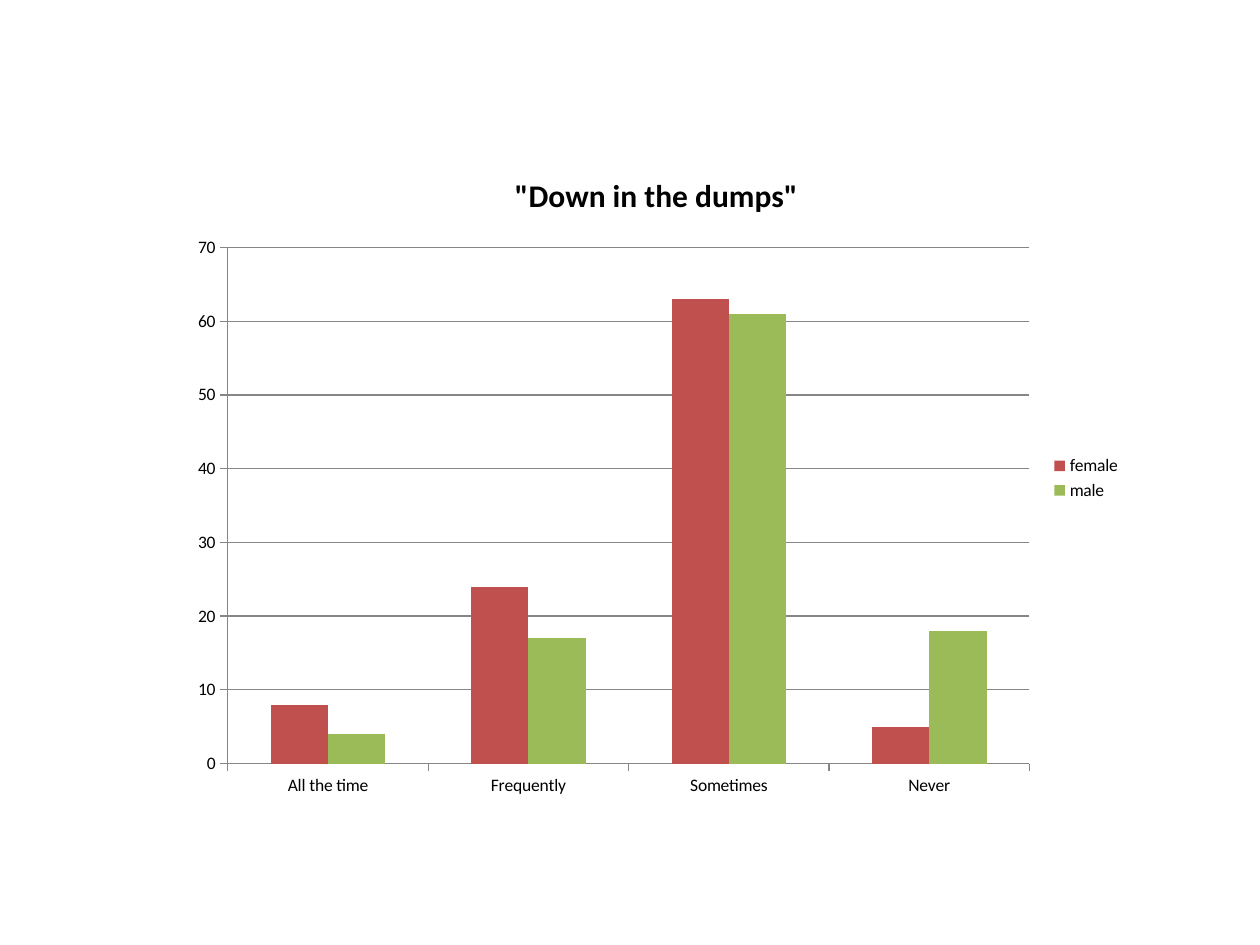
from pptx import Presentation
from pptx.chart.data import CategoryChartData
from pptx.dml.color import RGBColor
from pptx.enum.chart import XL_CHART_TYPE, XL_LEGEND_POSITION, XL_TICK_MARK
from pptx.util import Inches, Pt


def color(code):
    return RGBColor.from_string(code)


def apply(target, values):
    for name, value in values.items():
        setattr(target, name, value)


class Deck:
    face = "Calibri"
    ink = "000000"
    rule = "868686"

    def __init__(self, width, height):
        self.deck = Presentation()
        apply(self.deck, {"slide_width": Inches(width), "slide_height": Inches(height)})
        self.slide = None

    def page(self):
        self.slide = self.deck.slides.add_slide(self.deck.slide_layouts[6])

    def font(self, font, size, bold=False):
        apply(font, {"name": self.face, "size": Pt(size), "bold": bold})
        font.color.rgb = color(self.ink)

    def line(self, line):
        line.color.rgb = color(self.rule)
        line.width = Pt(0.75)

    def axis(self, axis, values):
        apply(axis, {"major_tick_mark": XL_TICK_MARK.OUTSIDE,
                     "minor_tick_mark": XL_TICK_MARK.NONE, **values})
        self.line(axis.format.line)
        if axis.has_major_gridlines:
            self.line(axis.major_gridlines.format.line)

    def columns(self, box, title, cats, series):
        data = CategoryChartData()
        data.categories = cats
        for name, values, _ in series:
            data.add_series(name, values)
        frame = self.slide.shapes.add_chart(
            XL_CHART_TYPE.COLUMN_CLUSTERED, *map(Inches, box), data)
        chart = frame.chart
        self.font(chart.font, 10)

        chart.has_title = True
        text = chart.chart_title.text_frame
        text.text = title
        self.font(text.paragraphs[0].runs[0].font, 18, True)

        chart.has_legend = True
        apply(chart.legend, {"position": XL_LEGEND_POSITION.RIGHT,
                             "include_in_layout": False})

        self.axis(chart.category_axis, {"has_major_gridlines": False})
        self.axis(chart.value_axis, {"has_major_gridlines": True, "minimum_scale": 0,
                                     "maximum_scale": 70, "major_unit": 10})

        plot = chart.plots[0]
        apply(plot, {"gap_width": 150, "overlap": 0, "vary_by_categories": False})
        for bar, (_, _, code) in zip(plot.series, series):
            bar.invert_if_negative = False
            bar.format.fill.solid()
            bar.format.fill.fore_color.rgb = color(code)

    def save(self):
        self.deck.save("out.pptx")


def main():
    deck = Deck(10, 7.5)
    deck.page()
    deck.columns(
        (1.42, 1.17, 7.58, 5.25),
        '"Down in the dumps"',
        ["All the time", "Frequently", "Sometimes", "Never"],
        [("female", (8, 24, 63, 5), "C0504D"),
         ("male", (4, 17, 61, 18), "9BBB59")],
    )
    deck.save()


if __name__ == "__main__":
    main()
